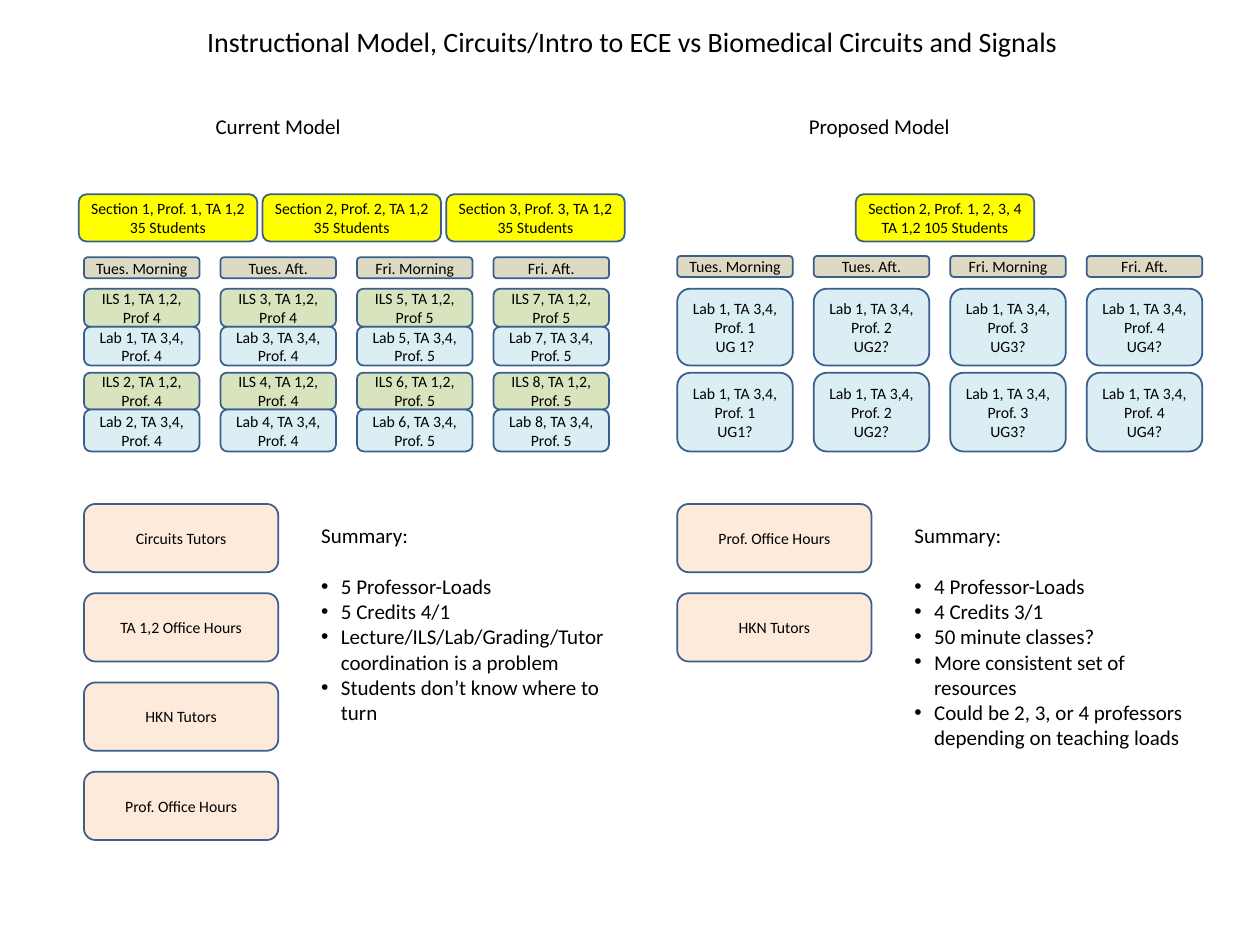
"""Build the slide comparing the current and proposed instructional models."""
from pptx import Presentation, util as u
from pptx.dml.color import RGBColor
from pptx.enum import shapes, text
from pptx.oxml import parse_xml
from pptx.oxml.ns import nsdecls

PX = 9525
BLACK = RGBColor(0x00, 0x00, 0x00)
OUTLINE = RGBColor(0x3A, 0x5F, 0x8C)
SECTION = RGBColor(0xFF, 0xFF, 0x00)
DAY = RGBColor(0xDD, 0xD9, 0xC3)
ILS = RGBColor(0xD7, 0xE4, 0xBD)
LAB = RGBColor(0xDB, 0xEE, 0xF4)
HELP = RGBColor(0xFD, 0xEA, 0xDA)

DAYS = ["Tues. Morning", "Tues. Aft.", "Fri. Morning", "Fri. Aft."]
LEFT, RIGHT = 128, 1032
COLUMN_W, COLUMN_STEP = 176, 208

prs = Presentation()
prs.slide_width, prs.slide_height = 1920 * PX, 1440 * PX
slide = prs.slides.add_slide(prs.slide_layouts[6])


def write(s, words, size, align, wrap=True):
    tf = s.text_frame
    tf.word_wrap = wrap
    tf.text = words
    for p in tf.paragraphs:
        p.alignment = align
        for r in p.runs:
            r.font.name = "Calibri"
            r.font.size = u.Pt(size)
            r.font.color.rgb = BLACK
    return tf


def add_box(x, y, w, h, fill, words):
    s = slide.shapes.add_shape(
        shapes.MSO_SHAPE.ROUNDED_RECTANGLE, x * PX, y * PX, w * PX, h * PX)
    s.shadow.inherit = False
    s.fill.solid()
    s.fill.fore_color.rgb = fill
    s.line.color.rgb = OUTLINE
    s.line.width = u.Pt(2)
    tf = write(s, words, 18, text.PP_ALIGN.CENTER)
    tf.vertical_anchor = text.MSO_ANCHOR.MIDDLE


for x, y, w, h, words, size, align, wrap in [
    (104, 32, 1720, 61, "Instructional Model, Circuits/Intro to ECE vs Biomedical Circuits and Signals",
     32, text.PP_ALIGN.CENTER, True),
    (319, 168, 212, 48, "Current Model", 24, text.PP_ALIGN.LEFT, False),
    (1223, 168, 236, 48, "Proposed Model", 24, text.PP_ALIGN.LEFT, False),
]:
    tb = slide.shapes.add_textbox(x * PX, y * PX, w * PX, h * PX)
    write(tb, words, size, align, wrap)

for i in range(3):
    n = i + 1
    add_box(120 + 280 * i, 296, 272, 72, SECTION, f"Section {n}, Prof. {n}, TA 1,2 35 Students")
add_box(1304, 296, 272, 72, SECTION, "Section 2, Prof. 1, 2, 3, 4 TA 1,2 105 Students")

for i, day in enumerate(DAYS):
    x = LEFT + COLUMN_STEP * i
    first, second = 2 * i + 1, 2 * i + 2
    prof = 4 + i // 2
    add_box(x, 392, COLUMN_W, 32, DAY, day)
    add_box(x, 440, COLUMN_W, 58, ILS, f"ILS {first}, TA 1,2, Prof {prof}")
    add_box(x, 498, COLUMN_W, 59, LAB, f"Lab {first}, TA 3,4, Prof. {prof}")
    add_box(x, 568, COLUMN_W, 56, ILS, f"ILS {second}, TA 1,2, Prof. {prof}")
    add_box(x, 624, COLUMN_W, 64, LAB, f"Lab {second}, TA 3,4, Prof. {prof}")

for i, day in enumerate(DAYS):
    x = RIGHT + COLUMN_STEP * i
    n = i + 1
    gap = " " if i == 0 else ""
    add_box(x, 390, COLUMN_W, 32, DAY, day)
    add_box(x, 440, COLUMN_W, 117, LAB, f"Lab 1, TA 3,4, Prof. {n}\nUG{gap}{n}?")
    add_box(x, 568, COLUMN_W, 120, LAB, f"Lab 1, TA 3,4, Prof. {n}\nUG{n}?")

for x, helpers in [
    (LEFT, ["Circuits Tutors", "TA 1,2 Office Hours", "HKN Tutors", "Prof. Office Hours"]),
    (RIGHT, ["Prof. Office Hours", "HKN Tutors"]),
]:
    for i, helper in enumerate(helpers):
        add_box(x, 768 + 136 * i, 296, 104, HELP, helper)

for x, h, points in [
    (480, 320, ["5 Professor-Loads", "5 Credits 4/1",
                "Lecture/ILS/Lab/Grading/Tutor coordination is a problem",
                "Students don’t know where to turn"]),
    (1384, 359, ["4 Professor-Loads", "4 Credits 3/1", "50 minute classes?",
                 "More consistent set of resources",
                 "Could be 2, 3, or 4 professors depending on teaching loads"]),
]:
    tb = slide.shapes.add_textbox(x * PX, 792 * PX, 464 * PX, h * PX)
    tf = write(tb, "\n".join(["Summary:"] + points), 24, text.PP_ALIGN.LEFT)
    tf.paragraphs[0].space_after = u.Pt(29)
    for p in tf.paragraphs[1:]:
        pPr = p._p.get_or_add_pPr()
        pPr.set("marL", str(30 * PX))
        pPr.set("indent", str(-30 * PX))
        pPr.append(parse_xml(f'<a:buFont {nsdecls("a")} typeface="Arial"/>'))
        pPr.append(parse_xml(f'<a:buChar {nsdecls("a")} char="•"/>'))

prs.save("out.pptx")
